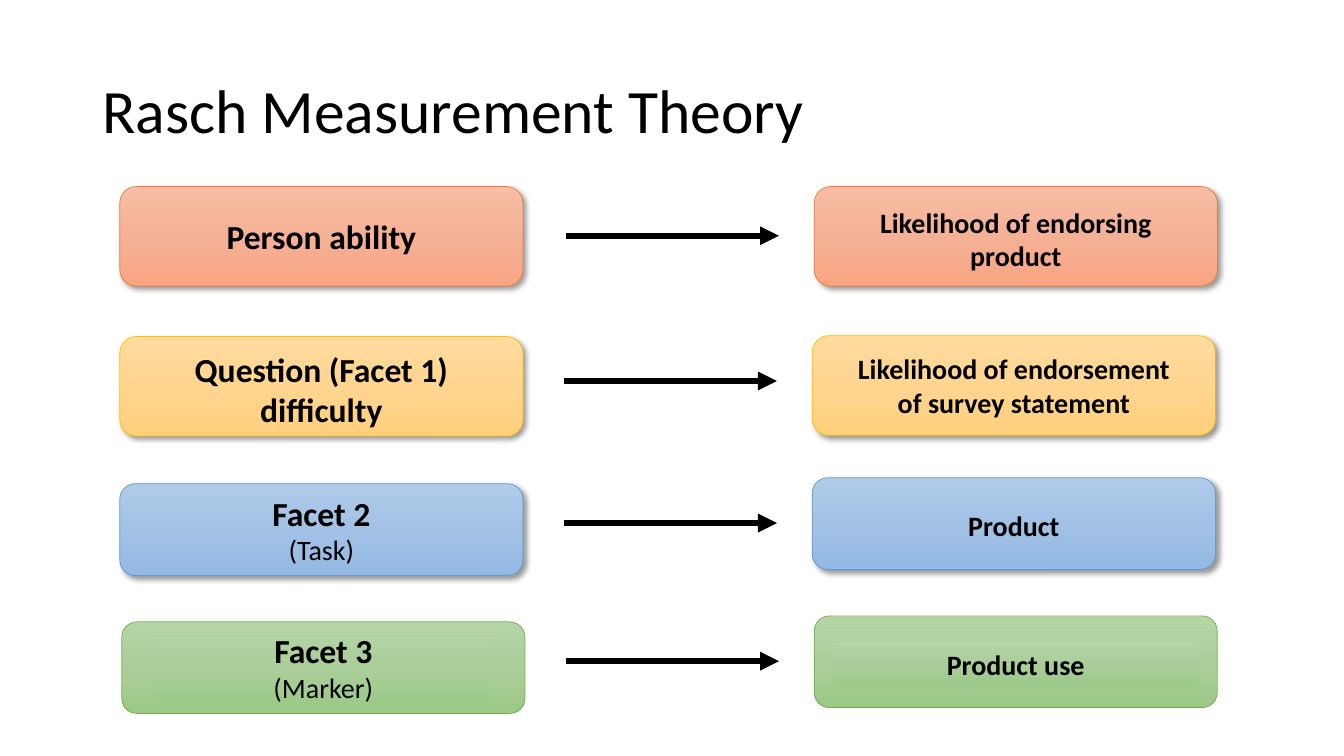
"""Build the Rasch Measurement Theory slide: four rows of paired cards joined by arrows."""
from copy import deepcopy

from lxml.etree import SubElement
from pptx import Presentation
from pptx.dml.color import RGBColor
from pptx.enum.shapes import MSO_CONNECTOR as Connector, MSO_SHAPE as Shape
from pptx.enum.text import MSO_ANCHOR as Anchor, PP_ALIGN as Align
from pptx.oxml.ns import qn
from pptx.util import Cm, Pt

BLACK = RGBColor(0x00, 0x00, 0x00)
CORAL = [RGBColor(0xF7, 0xBD, 0xA5), RGBColor(0xF5, 0xB1, 0x96), RGBColor(0xF8, 0xA5, 0x82)]
AMBER = [RGBColor(0xFF, 0xDB, 0x9E), RGBColor(0xFF, 0xD5, 0x90), RGBColor(0xFF, 0xD0, 0x7C)]
BLUE = [RGBColor(0xB1, 0xCB, 0xE9), RGBColor(0xA3, 0xC1, 0xE5), RGBColor(0x93, 0xB9, 0xE4)]
GREEN = [RGBColor(0xB5, 0xD5, 0xA7), RGBColor(0xAA, 0xCE, 0x9A), RGBColor(0x9C, 0xC9, 0x87)]
CORAL_EDGE = RGBColor(0xED, 0x7D, 0x31)
AMBER_EDGE = RGBColor(0xFF, 0xC0, 0x00)
BLUE_EDGE = RGBColor(0x5B, 0x9B, 0xD5)
GREEN_EDGE = RGBColor(0x70, 0xAD, 0x47)

CARD_WIDTH = 10.16
ARROW_LENGTH = 5.36
ARROW_OFFSET = 6.25


def fill_gradient(shape, colours):
    """Fill a shape from top to bottom with three evenly spaced colours."""
    shape.fill.gradient()
    shape.fill.gradient_angle = 270
    stop_list = shape._element.spPr.find(".//" + qn("a:gsLst"))
    stop_list.append(deepcopy(stop_list[0]))
    for index, (stop, colour) in enumerate(zip(shape.fill.gradient_stops, colours)):
        stop.position = index / 2
        stop.color.rgb = colour


def add_span(para, text, size, bold):
    """Add one black Calibri run to a paragraph."""
    span = para.add_run()
    span.text = text
    span.font.name = "Calibri"
    span.font.size = Pt(size)
    span.font.bold = bold
    span.font.color.rgb = BLACK


deck = Presentation()
deck.slide_width, deck.slide_height = Cm(33.87), Cm(19.05)
page = deck.slides.add_slide(deck.slide_layouts[6])

title = page.shapes.add_textbox(Cm(2.33), Cm(1.01), Cm(29.21), Cm(3.68))
title.text_frame.word_wrap = True
title.text_frame.vertical_anchor = Anchor.MIDDLE
title_para = title.text_frame.paragraphs[0]
title_para.line_spacing = 0.9
add_span(title_para, "Rasch Measurement Theory", 44, False)

# Each card: left, top, label top, label height, label inset, lines of (text, size, bold)
rows = [
    (CORAL, CORAL_EDGE, 2.51, 5.94, [
        (3.02, 4.7, 5.31, 1.27, 0.84, [("Person ability", 24, True)]),
        (20.52, 4.7, 5.05, 1.96, 0.84, [("Likelihood of endorsing product", 20, True)])]),
    (AMBER, AMBER_EDGE, 2.51, 9.6, [
        (3.02, 8.48, 8.66, 2.31, 0.84, [("Question (Facet 1) difficulty", 24, True)]),
        (20.47, 8.46, 8.74, 1.96, 0.84,
         [("Likelihood of endorsement of survey statement", 20, True)])]),
    (BLUE, BLUE_EDGE, 2.31, 13.18, [
        (3.02, 12.19, 12.29, 2.13, 0.84, [("Facet 2", 24, True), ("(Task)", 20, False)]),
        (20.47, 12.04, 12.7, 1.12, 0.84, [("Product", 20, True)])]),
    (GREEN, GREEN_EDGE, 2.31, 16.66, [
        (3.07, 15.67, 15.75, 2.13, 0.84, [("Facet 3", 24, True), ("(Marker)", 20, False)]),
        (20.52, 15.52, 16.18, 1.12, 0.46, [("Product use", 20, True)])]),
]

for colours, edge, card_height, arrow_y, cards in rows:
    for left, top, label_top, label_height, inset, lines in cards:
        group = page.shapes.add_group_shape()
        card = group.shapes.add_shape(
            Shape.ROUNDED_RECTANGLE, Cm(left), Cm(top), Cm(CARD_WIDTH), Cm(card_height))
        card.shadow.inherit = False
        fill_gradient(card, colours)
        card.line.color.rgb = edge
        card.line.width = Pt(0.5)

        label = group.shapes.add_textbox(
            Cm(left + inset), Cm(label_top), Cm(CARD_WIDTH - 2 * inset), Cm(label_height))
        label.text_frame.word_wrap = True
        for index, (text, size, bold) in enumerate(lines):
            frame = label.text_frame
            para = frame.add_paragraph() if index else frame.paragraphs[0]
            para.alignment = Align.CENTER
            add_span(para, text, size, bold)

        if colours is GREEN:
            fill_gradient(label, colours)
        else:
            effects = card._element.spPr.find(qn("a:effectLst"))
            shadow = SubElement(
                effects, qn("a:outerShdw"), blurRad=str(Pt(4)), dist=str(Pt(3)),
                dir="2700000", algn="tl", rotWithShape="0")
            shade = SubElement(shadow, qn("a:srgbClr"), val=str(BLACK))
            SubElement(shade, qn("a:alpha"), val="40000")

    arrow_left = cards[1][0] - ARROW_OFFSET
    arrow = page.shapes.add_connector(
        Connector.STRAIGHT, Cm(arrow_left), Cm(arrow_y),
        Cm(arrow_left + ARROW_LENGTH), Cm(arrow_y))
    arrow.line.color.rgb = BLACK
    arrow.line.width = Pt(4.5)
    SubElement(arrow.line._get_or_add_ln(), qn("a:tailEnd"), type="triangle")
    SubElement(arrow._element.spPr, qn("a:effectLst"))

deck.save("out.pptx")
